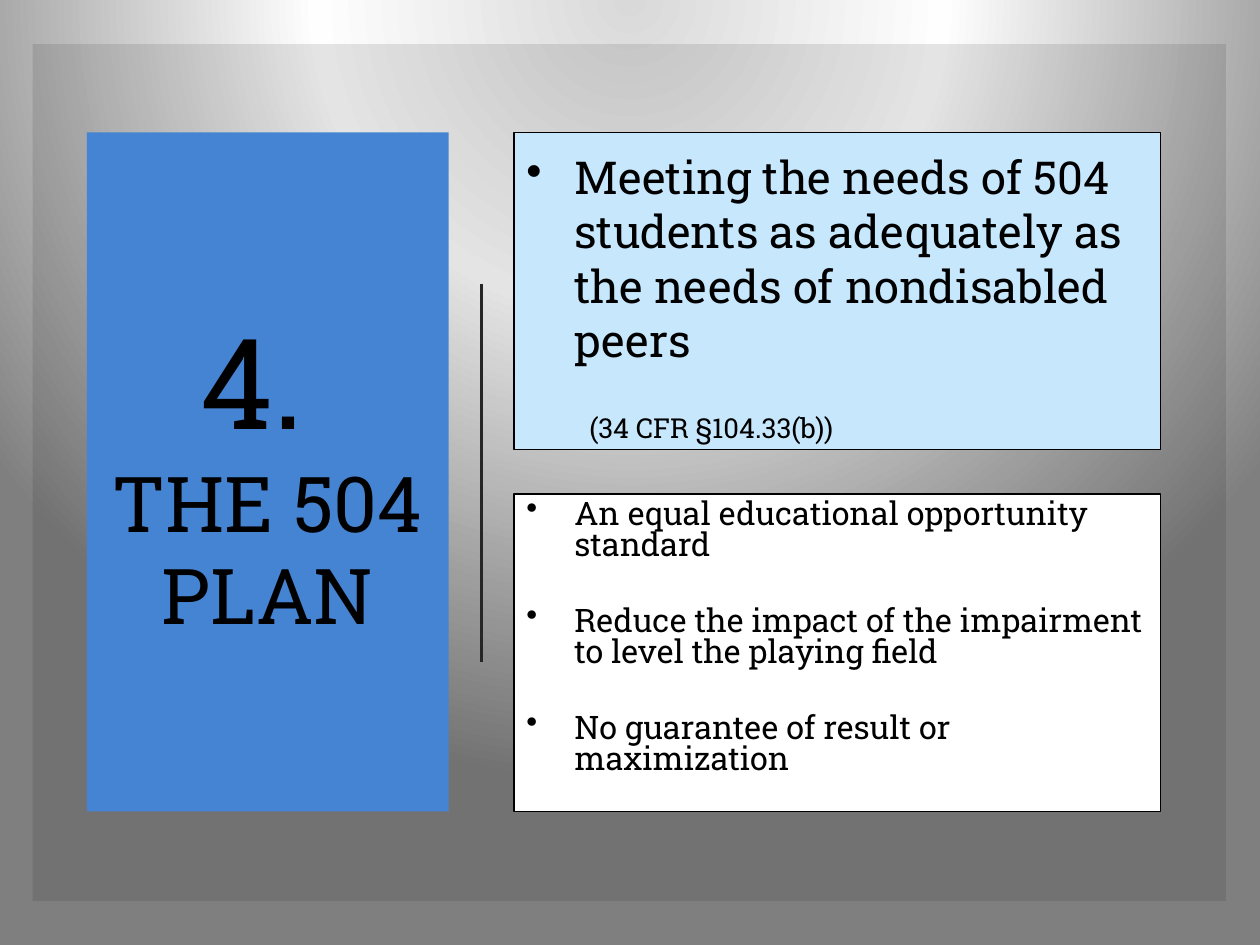
import lxml.etree
import pptx
import pptx.dml.color
import pptx.enum.shapes
import pptx.enum.text
import pptx.oxml
import pptx.oxml.ns
import pptx.util

Inches = pptx.util.Inches
Pt = pptx.util.Pt
RGBColor = pptx.dml.color.RGBColor
qn = pptx.oxml.ns.qn

FONT = "Roboto Slab"
BLACK = RGBColor(0x00, 0x00, 0x00)
WHITE = RGBColor(0xFF, 0xFF, 0xFF)
BLUE = RGBColor(0x45, 0x84, 0xD3)
PALE_BLUE = RGBColor(0xC6, 0xE7, 0xFC)
CHARCOAL = RGBColor(0x26, 0x26, 0x26)

PANEL_TOP = 1.05
CARD_LEFT, CARD_WIDTH, CARD_HEIGHT = 4.08, 5.13, 2.52
CARD_PITCH = 2.87
HANGING = Inches(0.38)

BACKGROUND = f"""
<p:bg {pptx.oxml.ns.nsdecls("p", "a")}><p:bgPr>
  <a:gradFill rotWithShape="1">
    <a:gsLst>
      <a:gs pos="0"><a:srgbClr val="D9D9D9"/></a:gs>
      <a:gs pos="40000"><a:srgbClr val="FEFEFE"/></a:gs>
      <a:gs pos="100000"><a:srgbClr val="7F7F7F"/></a:gs>
    </a:gsLst>
    <a:path path="circle">
      <a:fillToRect l="50000" t="-80000" r="50000" b="180000"/>
    </a:path>
  </a:gradFill>
  <a:effectLst/>
</p:bgPr></p:bg>"""


def set_background(slide):
    slide.element.cSld.insert(0, pptx.oxml.parse_xml(BACKGROUND))


def add_rectangle(slide, left, top, width, height, fill):
    rectangle = slide.shapes.add_shape(
        pptx.enum.shapes.MSO_SHAPE.RECTANGLE,
        Inches(left), Inches(top), Inches(width), Inches(height))
    rectangle.shadow.inherit = False
    rectangle.fill.solid()
    rectangle.fill.fore_color.rgb = fill
    return rectangle


def add_backdrop(slide):
    """Add the faint dark frame behind the title."""
    backdrop = add_rectangle(slide, 0.26, 0.35, 9.47, 6.8, BLACK)
    backdrop.line.fill.background()
    tint = backdrop.fill._xPr.find(".//" + qn("a:srgbClr"))
    lxml.etree.SubElement(tint, qn("a:alpha")).set("val", "10000")
    slide.shapes.title.element.addprevious(backdrop.element)


def add_run(paragraph, text, size):
    run = paragraph.add_run()
    run.text = text
    run.font.name = FONT
    run.font.size = Pt(size)
    run.font.color.rgb = BLACK


def fill_title(slide):
    title = slide.shapes.title
    title.left, title.top = Inches(0.69), Inches(PANEL_TOP)
    title.width, title.height = Inches(2.87), Inches(5.39)
    title.fill.solid()
    title.fill.fore_color.rgb = BLUE
    frame = title.text_frame
    frame.word_wrap = True
    frame.auto_size = pptx.enum.text.MSO_AUTO_SIZE.NONE
    frame.vertical_anchor = pptx.enum.text.MSO_ANCHOR.MIDDLE
    heading = frame.paragraphs[0]
    heading.alignment = pptx.enum.text.PP_ALIGN.CENTER
    add_run(heading, "4. ", 72)
    heading.add_line_break()
    add_run(heading, "THE 504 PLAN", 44)


def add_divider(slide):
    divider = slide.shapes.add_connector(
        pptx.enum.shapes.MSO_CONNECTOR.STRAIGHT,
        Inches(3.82), Inches(2.25), Inches(3.82), Inches(5.25))
    divider.line.color.rgb = CHARCOAL
    divider.line.width = Pt(1.5)
    lxml.etree.SubElement(divider.element.spPr, qn("a:effectLst"))


def add_card(slide, row, fill, anchor):
    """Add an outlined card in the right column and return its text frame."""
    card = add_rectangle(slide, CARD_LEFT, PANEL_TOP + row * CARD_PITCH,
                         CARD_WIDTH, CARD_HEIGHT, fill)
    card.line.color.rgb = BLACK
    card.line.width = Pt(0.75)
    card.text_frame.word_wrap = True
    card.text_frame.vertical_anchor = anchor
    return card.text_frame


def add_paragraph(frame, text, size, bullet=True, before=None, spacing=None):
    first = frame.paragraphs[0]
    paragraph = frame.add_paragraph() if first.runs else first
    if bullet:
        properties = paragraph._p.get_or_add_pPr()
        properties.set("marL", str(HANGING))
        properties.set("indent", str(-HANGING))
        lxml.etree.SubElement(properties, qn("a:buChar")).set("char", "•")
    paragraph.alignment = pptx.enum.text.PP_ALIGN.LEFT
    if before is not None:
        paragraph.space_before = Pt(before)
    if spacing is not None:
        paragraph.line_spacing = spacing
    add_run(paragraph, text, size)


def main():
    deck = pptx.Presentation()
    deck.slide_width, deck.slide_height = Inches(10), Inches(7.5)
    slide = deck.slides.add_slide(deck.slide_layouts[5])
    set_background(slide)
    add_backdrop(slide)
    fill_title(slide)
    add_divider(slide)

    requirement = add_card(slide, 0, PALE_BLUE,
                           pptx.enum.text.MSO_ANCHOR.BOTTOM)
    add_paragraph(requirement, "Meeting the needs of 504 students as adequately "
                  "as the needs of nondisabled peers", 25.9)
    add_paragraph(requirement, "\t(34 CFR §104.33(b))", 15.7,
                  bullet=False, before=25)

    standards = add_card(slide, 1, WHITE, pptx.enum.text.MSO_ANCHOR.TOP)
    for index, standard in enumerate((
            "An equal educational opportunity standard",
            "Reduce the impact of the impairment to level the playing field",
            "No guarantee of result or maximization")):
        add_paragraph(standards, standard, 18.5,
                      before=25.7 if index else None, spacing=0.8)

    deck.save("out.pptx")


if __name__ == "__main__":
    main()
